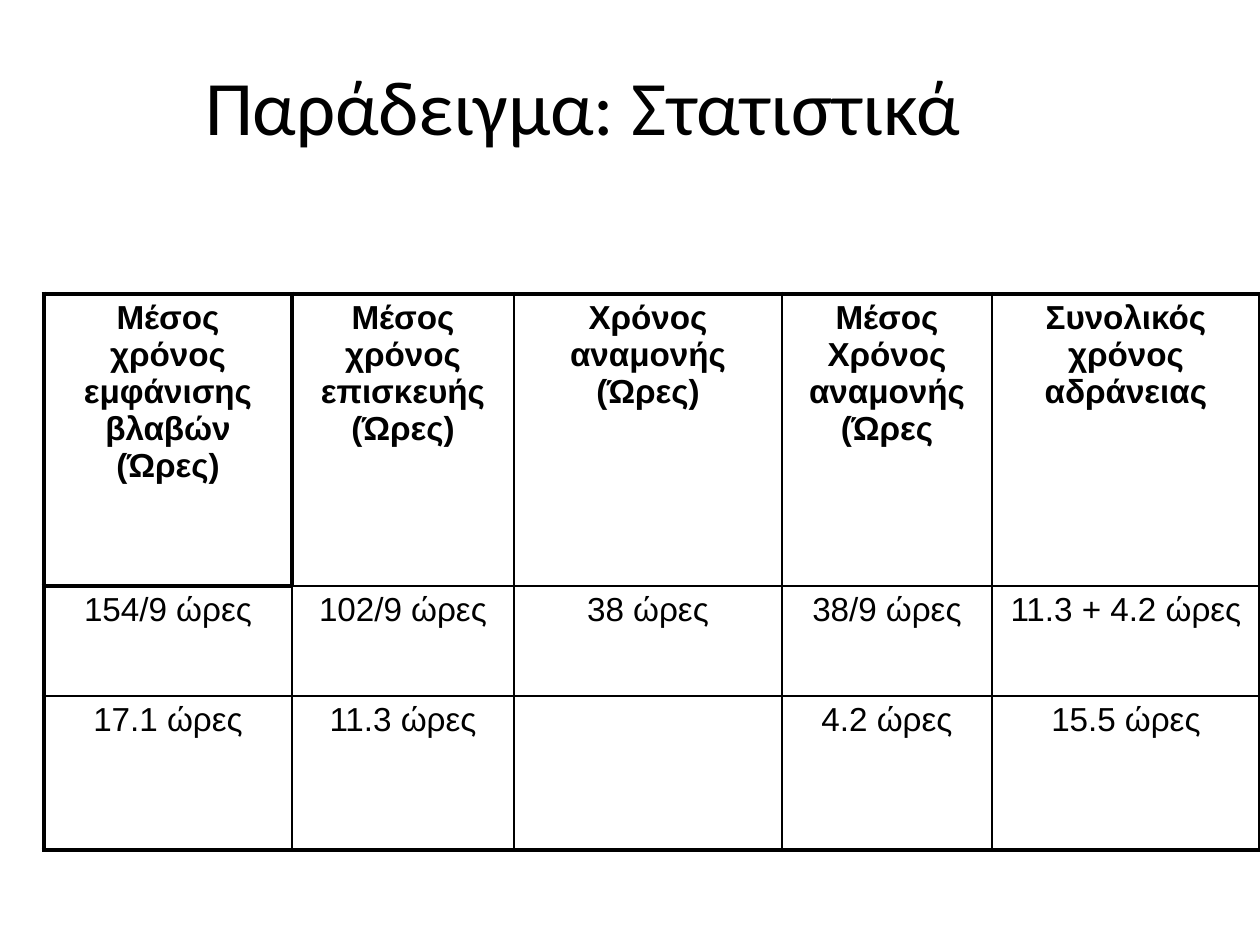
from lxml import etree
from pptx import Presentation
from pptx.dml.color import RGBColor
from pptx.enum.text import MSO_ANCHOR, PP_ALIGN
from pptx.oxml.ns import qn
from pptx.util import Pt

CENTER = PP_ALIGN.CENTER
MIDDLE, TOP = MSO_ANCHOR.MIDDLE, MSO_ANCHOR.TOP
COLORS = {"ink": "000000"}

TITLE = "Παράδειγμα: Στατιστικά"
STATISTICS = [
    ["Μέσος χρόνος εμφάνισης βλαβών (Ώρες)", "Μέσος χρόνος επισκευής (Ώρες)",
     "Χρόνος αναμονής (Ώρες)", "Μέσος Χρόνος αναμονής (Ώρες",
     "Συνολικός χρόνος αδράνειας"],
    ["154/9 ώρες", "102/9 ώρες", "38 ώρες", "38/9 ώρες", "11.3 + 4.2 ώρες"],
    ["17.1 ώρες", "11.3 ώρες", "", "4.2 ώρες", "15.5 ώρες"],
]
COLUMN_WIDTHS = [248, 222, 268, 210, 268]
ROW_HEIGHTS = [292, 110, 154]
TITLE_BOX = (63, 16, 1040, 178)
TABLE_LEFT, TABLE_TOP = 44, 294
THIN, HEADING, OUTER = 1, 2.25, 3


def px(length):
    return round(length * 914400 / 126)


def write(paragraph, text, font, size, bold=False):
    paragraph.alignment = CENTER
    run = paragraph.add_run()
    run.text = text
    run.font.name = font
    run.font.size = Pt(size)
    run.font.bold = bold
    run.font.color.rgb = RGBColor.from_string(COLORS["ink"])


def border_widths(row, column):
    last_row, last_column = len(ROW_HEIGHTS) - 1, len(COLUMN_WIDTHS) - 1
    corner = (row, column) == (0, 0)
    return {
        "L": OUTER if column == 0 else HEADING if (row, column) == (0, 1) else THIN,
        "R": OUTER if column == last_column else HEADING if corner else THIN,
        "T": OUTER if row == 0 else HEADING if (row, column) == (1, 0) else THIN,
        "B": OUTER if row == last_row else HEADING if corner else THIN,
    }


def draw_borders(cell, widths):
    properties = cell._tc.get_or_add_tcPr()
    for position, (side, width) in enumerate(widths.items()):
        line = etree.Element(qn(f"a:ln{side}"), w=str(Pt(width)))
        fill = etree.SubElement(line, qn("a:solidFill"))
        etree.SubElement(fill, qn("a:srgbClr"), val=COLORS["ink"])
        properties.insert(position, line)


def add_title(slide):
    frame = slide.shapes.add_textbox(*map(px, TITLE_BOX)).text_frame
    frame.word_wrap = True
    frame.vertical_anchor = MIDDLE
    write(frame.paragraphs[0], TITLE, "Calibri", 44)


def add_statistics(slide):
    table = slide.shapes.add_table(
        len(ROW_HEIGHTS), len(COLUMN_WIDTHS), px(TABLE_LEFT), px(TABLE_TOP),
        px(sum(COLUMN_WIDTHS)), px(sum(ROW_HEIGHTS))).table
    table.first_row = table.horz_banding = False
    for column, width in zip(table.columns, COLUMN_WIDTHS):
        column.width = px(width)
    for row, height in zip(table.rows, ROW_HEIGHTS):
        row.height = px(height)
    for r, texts in enumerate(STATISTICS):
        for c, text in enumerate(texts):
            cell = table.cell(r, c)
            cell.fill.background()
            cell.vertical_anchor = TOP
            cell.margin_left = cell.margin_right = px(14)
            cell.margin_top = cell.margin_bottom = px(6)
            if text:
                write(cell.text_frame.paragraphs[0], text, "Arial", 19, r == 0)
            draw_borders(cell, border_widths(r, c))


def main():
    deck = Presentation()
    deck.slide_width, deck.slide_height = px(1260), px(945)
    slide = deck.slides.add_slide(deck.slide_layouts[6])
    add_title(slide)
    add_statistics(slide)
    deck.save("out.pptx")


if __name__ == "__main__":
    main()
